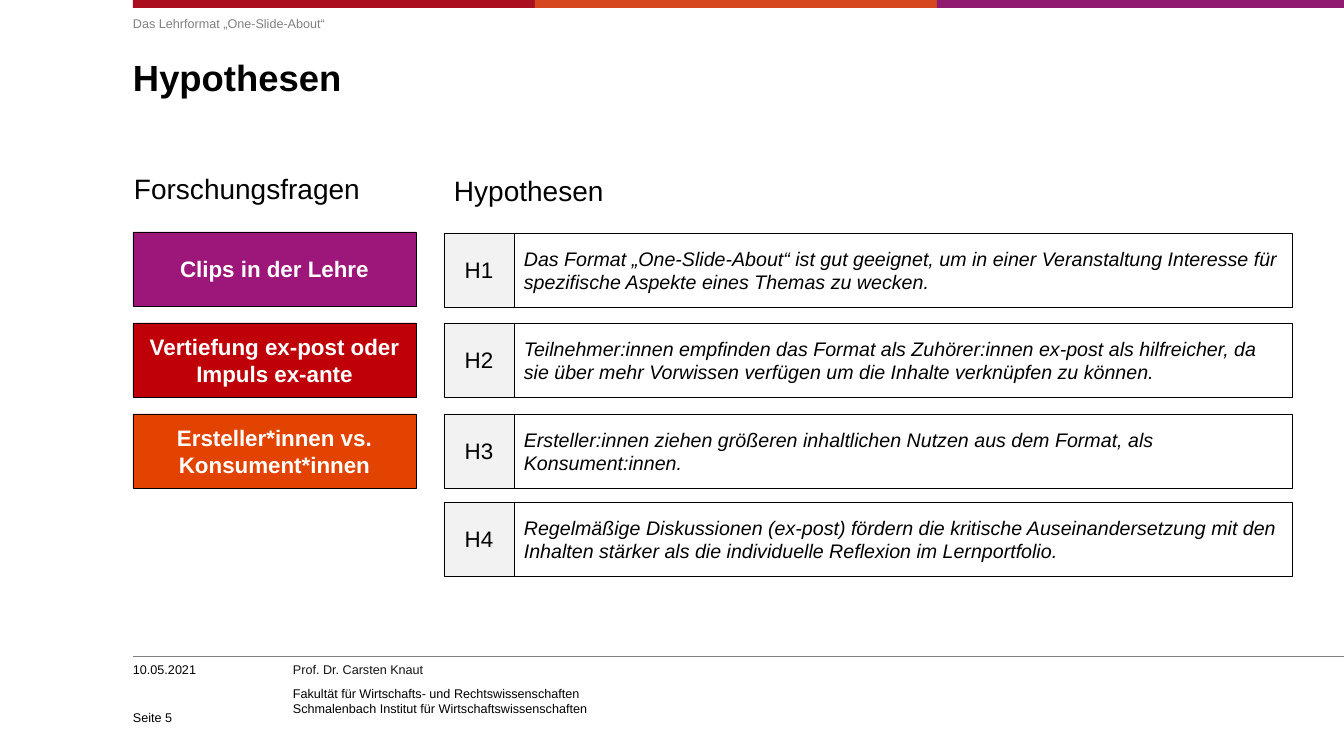
from copy import deepcopy
from dataclasses import dataclass

from lxml.etree import SubElement
from pptx import Presentation
from pptx.dml.color import RGBColor
from pptx.enum.shapes import MSO_CONNECTOR, MSO_SHAPE
from pptx.enum.text import MSO_ANCHOR, MSO_AUTO_SIZE, PP_ALIGN
from pptx.oxml.ns import qn
from pptx.util import Emu, Pt


@dataclass(frozen=True)
class Theme:
    font: str = "Arial"
    black: str = "000000"
    author: str = "141313"
    white: str = "FFFFFF"
    grey: str = "808080"
    label_fill: str = "F2F2F2"
    bands: tuple = ("AA0F1F", "D7471F", "901B6E")
    small: int = 9
    statement: int = 14
    box: int = 16
    heading: int = 20
    title: int = 26
    hairline: float = 0.5


THEME = Theme()
EMU_PER_PX = 914400 / 100.8
WIDTH, HEIGHT = 1344, 756
LEFT = 133
LABEL_LEFT, LABEL_WIDTH = 444, 70
STATEMENT_WIDTH = 778
QUESTION_WIDTH, BOX_HEIGHT = 283, 74
BAND_WIDTH = 402

QUESTIONS = [
    (232, "9D167A", "Clips in der Lehre"),
    (323, "C00009", "Vertiefung ex-post oder Impuls ex-ante"),
    (414, "E24300", "Ersteller*innen vs. Konsument*innen"),
]
HYPOTHESES = [
    (233, "Das Format „One-Slide-About“ ist gut geeignet, um in einer Veranstaltung "
          "Interesse für spezifische Aspekte eines Themas zu wecken."),
    (323, "Teilnehmer:innen empfinden das Format als Zuhörer:innen ex-post als hilfreicher, "
          "da sie über mehr Vorwissen verfügen um die Inhalte verknüpfen zu können."),
    (414, "Ersteller:innen ziehen größeren inhaltlichen Nutzen aus dem Format, "
          "als Konsument:innen."),
    (502, "Regelmäßige Diskussionen (ex-post) fördern die kritische Auseinandersetzung mit den "
          "Inhalten stärker als die individuelle Reflexion im Lernportfolio."),
]


def px(length):
    return Emu(round(length * EMU_PER_PX))


def rgb(color):
    return RGBColor.from_string(color)


def format_paragraph(paragraph, size, color, bold=False, italic=False, align=PP_ALIGN.LEFT):
    paragraph.alignment = align
    for run in paragraph.runs:
        font = run.font
        font.name, font.size = THEME.font, Pt(size)
        font.bold, font.italic = bold, italic
        font.color.rgb = rgb(color)


def remove_insets(frame):
    frame.margin_left = frame.margin_right = frame.margin_top = frame.margin_bottom = 0


def fill_placeholder(placeholder, bounds, text, size, color, bold=False):
    placeholder.left, placeholder.top, placeholder.width, placeholder.height = map(px, bounds)
    frame = placeholder.text_frame
    frame.text = text
    frame.word_wrap = True
    frame.auto_size = MSO_AUTO_SIZE.NONE
    frame.vertical_anchor = MSO_ANCHOR.TOP
    remove_insets(frame)
    paragraph = frame.paragraphs[0]
    properties = paragraph._p.get_or_add_pPr()
    properties.set("marL", "0")
    properties.set("indent", "0")
    SubElement(properties, qn("a:buNone"))
    paragraph.space_before = Pt(0)
    format_paragraph(paragraph, size, color, bold)
    return paragraph


def add_text(slide, bounds, text, size, anchor=MSO_ANCHOR.TOP, inset=False):
    frame = slide.shapes.add_textbox(*map(px, bounds)).text_frame
    frame.text = text
    frame.word_wrap = True
    frame.vertical_anchor = anchor
    if not inset:
        remove_insets(frame)
    for paragraph in frame.paragraphs:
        format_paragraph(paragraph, size, THEME.black)
    return frame


def add_rectangle(slide, bounds, fill, outlined=True):
    rectangle = slide.shapes.add_shape(MSO_SHAPE.RECTANGLE, *map(px, bounds))
    rectangle.shadow.inherit = False
    rectangle.fill.solid()
    rectangle.fill.fore_color.rgb = rgb(fill)
    if outlined:
        rectangle.line.color.rgb = rgb(THEME.black)
        rectangle.line.width = Pt(THEME.hairline)
    else:
        rectangle.line.fill.background()
    return rectangle


def add_box(slide, bounds, fill, text, size, color, **style):
    frame = add_rectangle(slide, bounds, fill).text_frame
    frame.text = text
    frame.word_wrap = True
    frame.vertical_anchor = MSO_ANCHOR.MIDDLE
    format_paragraph(frame.paragraphs[0], size, color, **style)


def add_bands(slide):
    for index, color in enumerate(THEME.bands):
        left = LEFT + index * BAND_WIDTH
        width = min(BAND_WIDTH + 5, WIDTH - left) if index == 2 else BAND_WIDTH
        add_rectangle(slide, (left, 0, width, 8), color, outlined=False)


def add_footer(slide):
    rule = slide.shapes.add_connector(
        MSO_CONNECTOR.STRAIGHT, px(LEFT), px(656), px(WIDTH), px(656))
    rule.line.color.rgb = rgb(THEME.grey)
    rule.line.width = Pt(THEME.hairline)
    SubElement(rule._element.spPr, qn("a:effectLst"))

    sender = add_text(
        slide, (293, 662, 434, 60),
        "Prof. Dr. Carsten Knaut\nFakultät für Wirtschafts- und Rechtswissenschaften"
        "\vSchmalenbach Institut für Wirtschaftswissenschaften", THEME.small)
    author, institute = sender.paragraphs
    format_paragraph(author, THEME.small, THEME.author)
    author.space_after = institute.space_after = Pt(6)
    line_break = institute._p.find(qn("a:br"))
    line_break.append(deepcopy(institute.runs[0]._r.rPr))

    add_text(slide, (LEFT, 662, 143, 20), "10.05.2021", THEME.small)
    add_text(slide, (LEFT, 702, 143, 23), "Seite 5", THEME.small, MSO_ANCHOR.BOTTOM)


def add_question(slide, top, color, question):
    add_box(slide, (LEFT, top, QUESTION_WIDTH, BOX_HEIGHT), color, question,
            THEME.box, THEME.white, bold=True, align=PP_ALIGN.CENTER)


def add_hypothesis(slide, number, top, statement):
    add_box(slide, (LABEL_LEFT + LABEL_WIDTH, top, STATEMENT_WIDTH, BOX_HEIGHT),
            THEME.white, statement, THEME.statement, THEME.black, italic=True)
    add_box(slide, (LABEL_LEFT, top, LABEL_WIDTH, BOX_HEIGHT), THEME.label_fill,
            f"H{number}", THEME.box, THEME.black, align=PP_ALIGN.CENTER)


def main():
    presentation = Presentation()
    presentation.slide_width, presentation.slide_height = px(WIDTH), px(HEIGHT)
    slide = presentation.slides.add_slide(presentation.slide_layouts[1])

    add_bands(slide)
    add_footer(slide)
    title = fill_placeholder(slide.shapes.title, (LEFT, 57, 1190, 99), "Hypothesen",
                             THEME.title, THEME.black, bold=True)
    title.line_spacing = Pt(30)
    topic = fill_placeholder(slide.placeholders[1], (LEFT, 16, 1189, 24),
                             "Das Lehrformat „One-Slide-About“", THEME.small, THEME.grey)
    topic.space_after = Pt(6)

    add_text(slide, (124, 167, 330, 44), "Forschungsfragen", THEME.heading, inset=True)
    add_text(slide, (LABEL_LEFT, 169, 330, 44), "Hypothesen", THEME.heading, inset=True)
    for top, color, question in QUESTIONS:
        add_question(slide, top, color, question)
    for number, (top, statement) in enumerate(HYPOTHESES, start=1):
        add_hypothesis(slide, number, top, statement)

    presentation.save("out.pptx")


if __name__ == "__main__":
    main()
